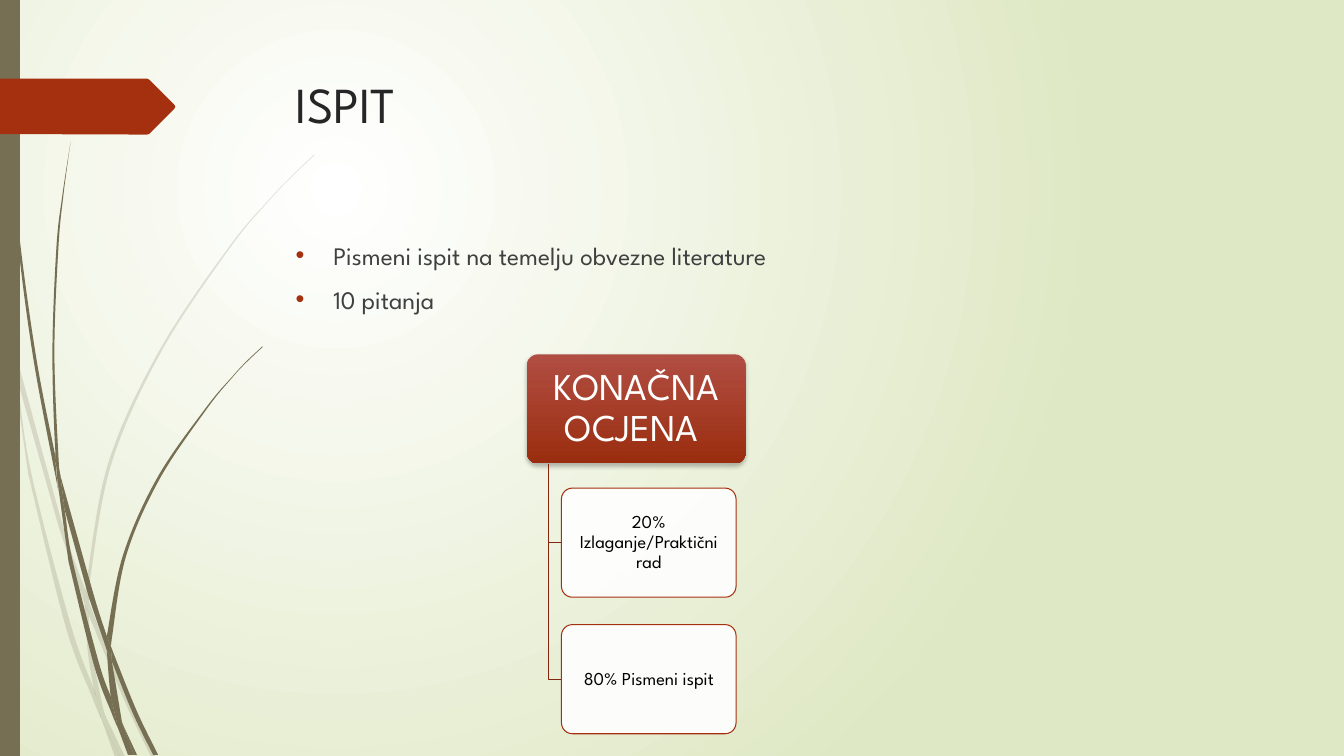
from lxml.etree import SubElement
from pptx import Presentation
from pptx.dml.color import RGBColor
from pptx.enum.shapes import MSO_SHAPE
from pptx.enum.text import MSO_ANCHOR, PP_ALIGN
from pptx.oxml.ns import qn
from pptx.util import Cm, Pt

COLORS = {
    "olive": "766F54", "rust": "A53010", "title": "262626", "body": "404040",
    "white": "FFFFFF", "black": "000000", "sage": "DFE8C4",
    "root_top": "B14E43", "root_bottom": "9A2D0F", "branch": "84260D",
}
FONT = "League Spartan"
UNIT = Cm(2.54) / 100

PALE_STRANDS = [
    [[(11, 350), (9, 322), (0, 282)], [(0, 299), (10, 344), (11, 350)]],
    [[(58, 522), (84, 599)], [(85, 586), (62, 520), (14, 345)], [(17, 376), (58, 522)]],
    [[(92, 607), (88, 596)], [(88, 610), (123, 694), (150, 751)],
     [(155, 751), (127, 692), (92, 607)]],
    [[(119, 751), (124, 751)], [(105, 711), (119, 751)]],
    [[(93, 683), (70, 619), (31, 469), (17, 376), (11, 350)],
     [(28, 470), (65, 621), (92, 693), (101, 714)], [(99, 707), (93, 683)]],
    [[(84, 599), (87, 646), (93, 683), (96, 692), (105, 711)],
     [(103, 706), (91, 646), (88, 610), (88, 608), (84, 599)]],
    [[(88, 584), (110, 462), (160, 349), (229, 245), (268, 198), (290, 175), (312, 154)],
     [(312, 153), (289, 175), (268, 197), (228, 244), (158, 348), (107, 461), (85, 584)],
     [(85, 586), (88, 596), (88, 584)]],
    [[(101, 714), (114, 751)], [(119, 751), (101, 714)]],
    [[(88, 608), (88, 610), (88, 596)], [(85, 586), (84, 599), (88, 608)]],
    [[(96, 692), (93, 683)], [(99, 707), (101, 714), (119, 751)],
     [(105, 711), (96, 692)]],
]
DARK_STRANDS = [
    [[(7, 110), (17, 233), (33, 355), (56, 477), (57, 481)],
     [(55, 457), (55, 453), (36, 355), (19, 232), (8, 109), (5, 48), (4, 0)],
     [(3, 0), (4, 48), (7, 110)]],
    [[(88, 592), (106, 645)], [(106, 633), (106, 631), (93, 590), (60, 472)],
     [(64, 505), (88, 592)]],
    [[(113, 649), (110, 641)], [(111, 656), (132, 708), (152, 749)],
     [(157, 749), (136, 706), (113, 649)]],
    [[(110, 691), (98, 657), (72, 556), (64, 505), (57, 477)],
     [(68, 557), (93, 659), (111, 708), (117, 722)], [(116, 717), (110, 691)]],
    [[(60, 472), (58, 453), (54, 349), (58, 245), (63, 193), (70, 141)],
     [(70, 141), (62, 193), (56, 245), (52, 349), (55, 449), (60, 472)]],
    [[(133, 749), (136, 749)], [(122, 719), (133, 749)]],
    [[(57, 477), (64, 505)], [(60, 472), (55, 449)], [(55, 453), (57, 477)]],
    [[(111, 633), (125, 552), (158, 476), (205, 406), (231, 374), (245, 359), (261, 344)],
     [(260, 344), (245, 358), (231, 373), (204, 405), (156, 474), (122, 551), (106, 631)],
     [(110, 641), (111, 633)]],
    [[(117, 722), (127, 749)], [(131, 749), (117, 722)]],
    [[(106, 645), (110, 691), (116, 706), (122, 719)],
     [(121, 716), (111, 656), (109, 651), (106, 645)]],
    [[(106, 645), (109, 651), (111, 656)], [(110, 641), (106, 631)],
     [(106, 633), (106, 645)]],
    [[(116, 706), (110, 691)], [(116, 717), (117, 722), (130, 749)],
     [(133, 749), (122, 719), (116, 706)]],
]
ARROW = [[(0, 78), (146, 78)], [(148, 79), (173, 104)], [(174, 106), (173, 108)],
         [(148, 133), (146, 133.5)], [(136, 133.5), (0, 133)]]


def rgb(name):
    return RGBColor.from_string(COLORS[name])


def bezier_handles(run):
    if len(run) == 2:
        return [None]
    pts = [run[0], *run, run[-1]]
    return [([q + (r - p) / 6 for p, q, r in zip(a, b, c)],
             [r - (s - q) / 6 for q, r, s in zip(b, c, d)])
            for a, b, c, d in zip(pts, pts[1:], pts[2:], pts[3:])]


class SlideBuilder:
    def __init__(self, slide, font):
        self.slide = slide
        self.font = font

    def gradient(self, fill, start, end):
        fill.gradient()
        for stop, name, pos in zip(fill.gradient_stops, (start, end), (0, 1)):
            stop.color.rgb = rgb(name)
            stop.position = pos

    def background(self, start, end):
        self.gradient(self.slide.background.fill, start, end)
        grad = self.slide.element.find(".//" + qn("a:gradFill"))
        grad.remove(grad.find(qn("a:lin")))
        radial = SubElement(grad, qn("a:path"), {"path": "circle"})
        SubElement(radial, qn("a:fillToRect"),
                   {"l": "50000", "t": "50000", "r": "100000", "b": "100000"})

    def paint(self, sp, fill, line=None, alpha=None):
        sp.shadow.inherit = False
        if fill:
            sp.fill.solid()
            sp.fill.fore_color.rgb = rgb(fill)
            if alpha:
                color = sp._element.spPr.find(".//" + qn("a:srgbClr"))
                SubElement(color, qn("a:alpha"), {"val": str(alpha * 1000)})
        else:
            sp.fill.background()
        if line:
            sp.line.color.rgb = rgb(line)
            sp.line.width = Pt(0.75)
        else:
            sp.line.fill.background()

    def polygon(self, pts, fill, line=None, alpha=None, close=True):
        fb = self.slide.shapes.build_freeform(*pts[0])
        fb.add_line_segments(pts[1:], close=close)
        sp = fb.convert_to_shape()
        self.paint(sp, fill, line, alpha)
        return sp

    def outline(self, runs, fill, alpha=None):
        pts = [(x * UNIT, y * UNIT) for run in runs for x, y in run]
        sp = self.polygon(pts, fill, alpha=alpha)
        handles = []
        for run in runs:
            handles += [None, *bezier_handles(run)]
        segments = list(sp._element.iter(qn("a:lnTo")))
        for segment, pair in zip(segments, handles[1:]):
            if pair:
                segment.tag = qn("a:cubicBezTo")
                for i, (x, y) in enumerate(pair):
                    pt = SubElement(segment, qn("a:pt"), {
                        "x": str(round(x * UNIT - sp.left)), "y": str(round(y * UNIT - sp.top))})
                    segment.insert(i, pt)

    def box(self, shape, x, y, w, h, fill, line=None, alpha=None):
        sp = self.slide.shapes.add_shape(shape, Cm(x), Cm(y), Cm(w), Cm(h))
        self.paint(sp, fill, line, alpha)
        return sp

    def run(self, p, text, size, color):
        r = p.add_run()
        r.text = text
        r.font.name = self.font
        r.font.size = Pt(size)
        r.font.color.rgb = rgb(color)

    def node(self, x, y, w, h, text, size, color, inset, **style):
        sp = self.box(MSO_SHAPE.ROUNDED_RECTANGLE, x, y, w, h, **style)
        sp.adjustments[0] = 0.1
        tf = sp.text_frame
        tf.word_wrap = True
        tf.vertical_anchor = MSO_ANCHOR.MIDDLE
        tf.margin_left = tf.margin_right = Cm(inset)
        tf.margin_top = tf.margin_bottom = Cm(0.15)
        p = tf.paragraphs[0]
        p.alignment = PP_ALIGN.CENTER
        p.line_spacing = 0.9
        self.run(p, text, size, color)
        return sp

    def drop_shadow(self, sp):
        effects = sp._element.spPr.find(qn("a:effectLst"))
        shadow = SubElement(effects, qn("a:outerShdw"), {
            "blurRad": str(Pt(3)), "dist": str(Pt(2)), "dir": "5400000", "rotWithShape": "0"})
        color = SubElement(shadow, qn("a:srgbClr"), {"val": COLORS["black"]})
        SubElement(color, qn("a:alpha"), {"val": "25000"})

    def text(self, x, y, w, h, lines, size, color, bullet=None):
        tf = self.slide.shapes.add_textbox(Cm(x), Cm(y), Cm(w), Cm(h)).text_frame
        tf.word_wrap = True
        for i, line in enumerate(lines):
            p = tf.add_paragraph() if i else tf.paragraphs[0]
            if bullet:
                p.space_before = Pt(10)
                pPr = p._p.get_or_add_pPr()
                pPr.set("marL", str(Cm(0.95)))
                pPr.set("indent", str(-Cm(0.95)))
                bu_color = SubElement(pPr, qn("a:buClr"))
                SubElement(bu_color, qn("a:srgbClr"), {"val": COLORS[bullet]})
                SubElement(pPr, qn("a:buFont"), {"typeface": "Arial"})
                SubElement(pPr, qn("a:buChar"), {"char": "•"})
            self.run(p, line, size, color)


def main():
    prs = Presentation()
    prs.slide_width, prs.slide_height = Cm(33.87), Cm(19.05)
    s = SlideBuilder(prs.slides.add_slide(prs.slide_layouts[6]), FONT)
    s.background("white", "sage")
    for strands, alpha in ((PALE_STRANDS, 20), (DARK_STRANDS, None)):
        for strand in strands:
            s.outline(strand, "olive", alpha)
    s.box(MSO_SHAPE.RECTANGLE, 0, 0, 0.5, 19.05, "olive")
    s.outline(ARROW, "rust")

    s.text(7.2, 1.73, 24.77, 3.56, ["ISPIT"], 36, "title")
    s.text(7.2, 5.92, 24.77, 10.49,
           ["Pismeni ispit na temelju obvezne literature", "10 pitanja"],
           18, "body", bullet="rust")

    root_x, root_y, node_h = 13.28, 8.93, 2.75
    spine_x, child_x = 13.83, 14.15
    root = s.node(root_x, root_y, 5.51, node_h, "KONAČNA OCJENA ", 27, "white",
                  inset=0.23, fill="rust")
    s.gradient(root.fill, "root_top", "root_bottom")
    root.fill.gradient_angle = 270
    s.drop_shadow(root)
    for i, grade in enumerate(["20% Izlaganje/Praktični rad", "80% Pismeni ispit"]):
        y = 12.3 + 3.44 * i
        mid = Cm(y + node_h / 2)
        s.polygon([(Cm(spine_x), Cm(root_y + node_h)), (Cm(spine_x), mid), (Cm(child_x), mid)],
                  None, "branch", close=False)
        s.node(child_x, y, 4.4, node_h, grade, 13, "black",
               inset=0.15, fill="white", line="rust", alpha=90)
    prs.save("out.pptx")


if __name__ == "__main__":
    main()
